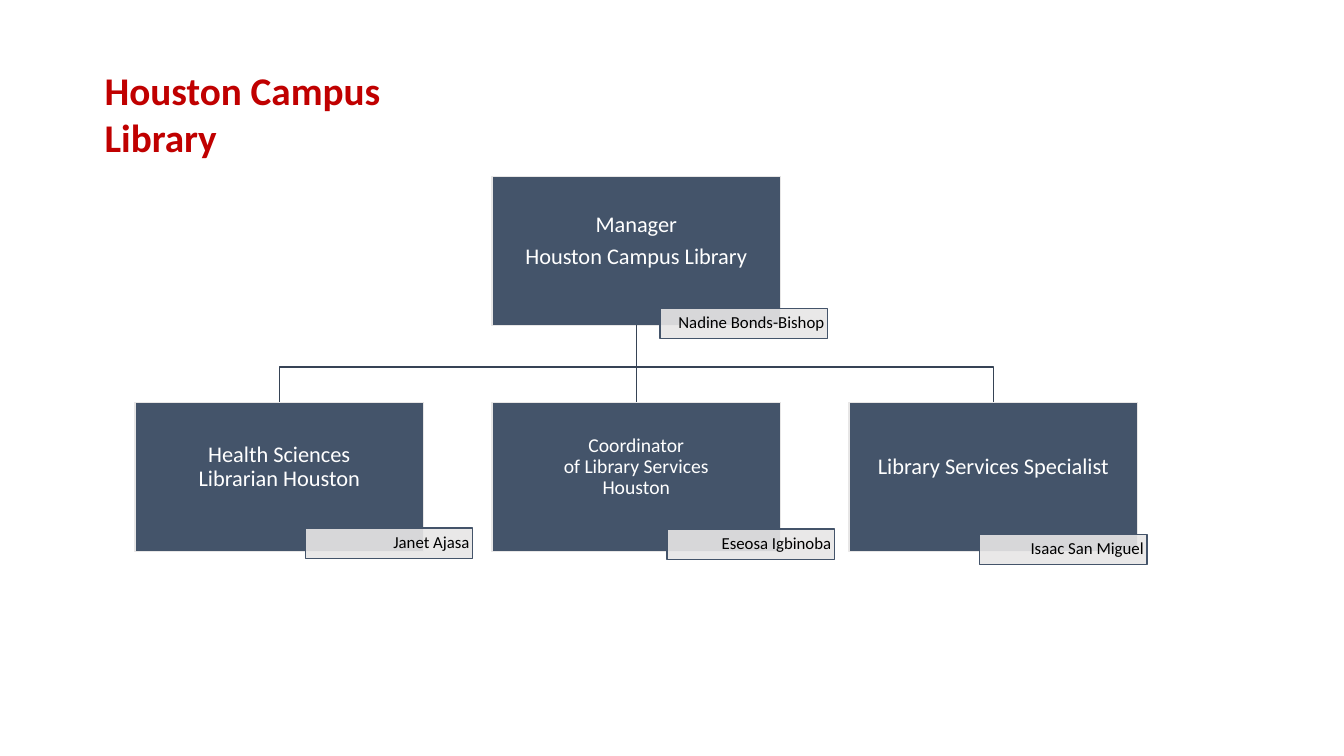
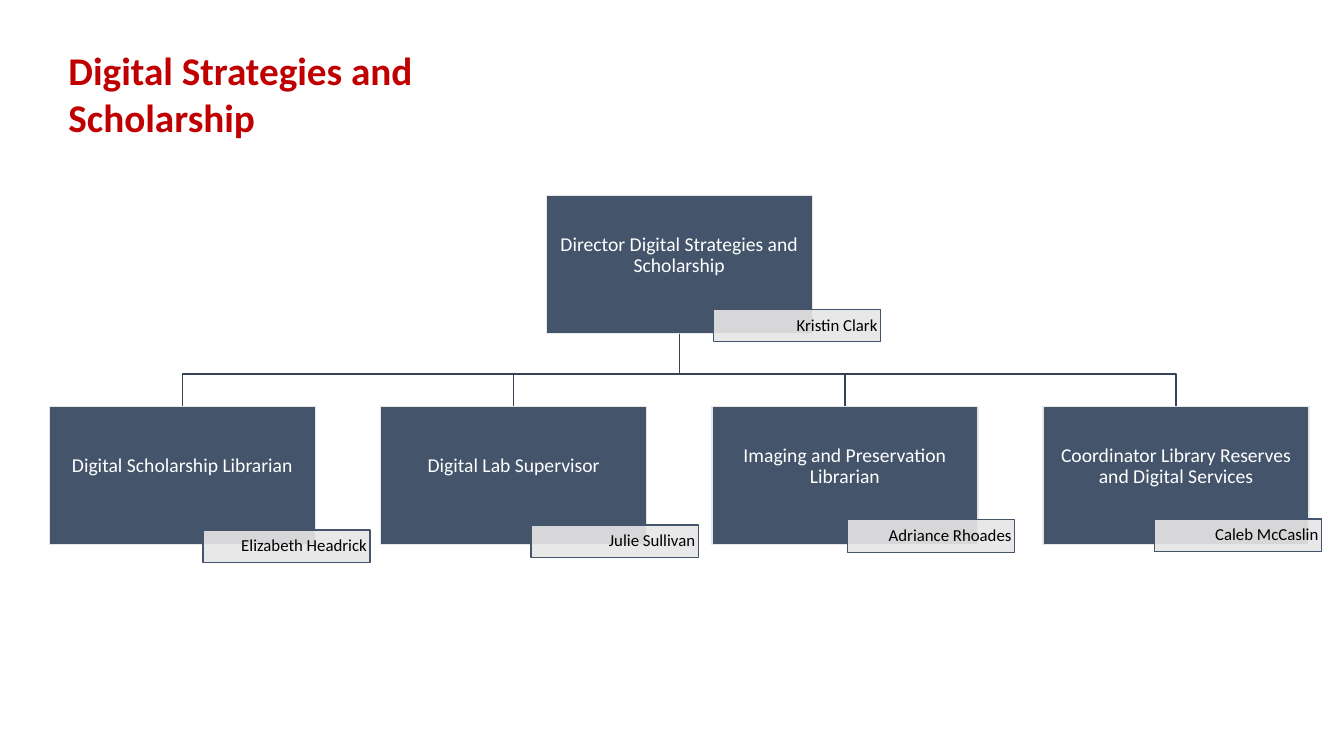
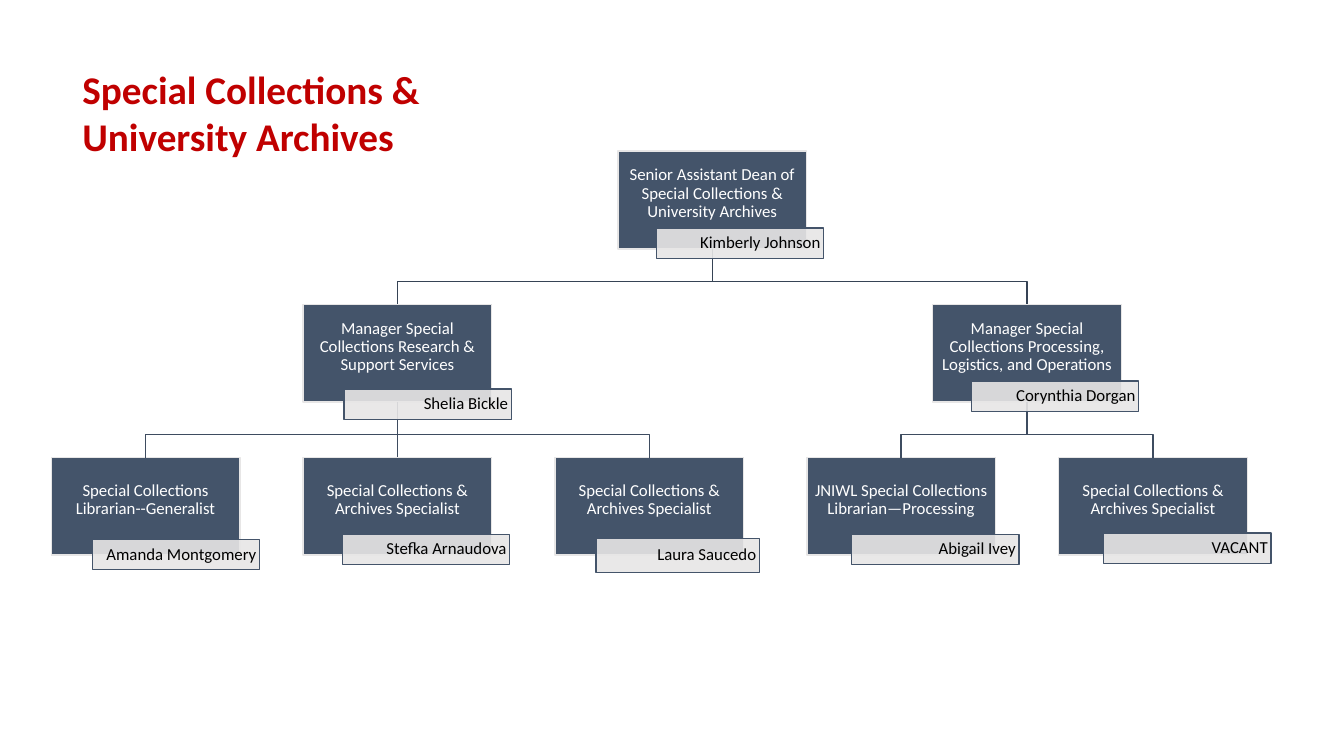
"""Build three library organisation charts, one to a slide."""
from dataclasses import dataclass
from typing import Optional

from lxml import etree
from pptx import Presentation
from pptx import util as u
from pptx.dml import color
from pptx.enum import shapes, text
from pptx.oxml import ns

FONT = "Calibri"
RED, SLATE, MIST = "C00000", "44546A", "E7E6E6"
WHITE, BLACK = "FFFFFF", "000000"
BRANCH_COLORS = ("364355", "3E4C60")
TAG_WIDTH = 119.5


@dataclass(frozen=True)
class Post:
    """A position, its holder's name tag and the posts below it."""
    role: str
    holder: str
    tag: tuple[float, float]
    reports: tuple["Post", ...] = ()
    size: Optional[float] = None
    tag_size: Optional[tuple[float, float]] = None


@dataclass(frozen=True)
class Chart:
    """A slide's title and the grid of its chart, in points."""
    title: str
    title_area: tuple[float, float, float, float]
    left: float
    top: float
    column_step: float
    row_step: float
    box_size: tuple[float, float]
    foot: float
    drop: float
    size: float
    tag_height: float
    head: Post


@dataclass(frozen=True)
class Placed:
    """A post whose box is drawn on the slide."""
    post: Post
    box: object
    level: int
    left: float
    reports: tuple["Placed", ...]


CHARTS = (
    Chart(
        "Houston Campus Library", (67.7, 43.2, 261.4, 74.9),
        left=96.5, top=126, column_step=255, row_step=161.3,
        box_size=(206, 106.5), foot=15, drop=25.2, size=16, tag_height=21.6,
        head=Post("Manager\nHouston Campus Library", "Nadine Bonds-Bishop", (471.6, 220.3), (
            Post("Health Sciences\vLibrarian Houston", "Janet Ajasa", (218.2, 377.3)),
            Post("Coordinator\vof Library Services\vHouston", "Eseosa Igbinoba",
                 (476.6, 378), size=14),
            Post("Library Services Specialist", "Isaac San Miguel", (699.8, 381.6)),
        )),
    ),
    Chart(
        "Digital Strategies and Scholarship", (41.8, 29.5, 382.3, 74.9),
        left=35.3, top=139.7, column_step=236.6, row_step=150.5,
        box_size=(190, 98.6), foot=13.7, drop=23, size=14, tag_height=23.2,
        head=Post("Director Digital Strategies and Scholarship", "Kristin Clark", (509.6, 221), (
            Post("Digital Scholarship Librarian", "Elizabeth Headrick", (144.9, 378.5)),
            Post("Digital Lab Supervisor", "Julie Sullivan", (379.4, 375.1)),
            Post("Imaging and Preservation Librarian", "Adriance Rhoades", (605.4, 371.3)),
            Post("Coordinator Library Reserves and Digital Services", "Caleb McCaslin",
                 (824.6, 370.8)),
        )),
    ),
    Chart(
        "Special Collections & University Archives", (51.8, 42.5, 332.6, 74.9),
        left=36.6, top=108, column_step=179.9, row_step=109.4,
        box_size=(134.8, 69.8), foot=10, drop=16.5, size=12, tag_height=21.6,
        head=Post("Senior Assistant Dean of Special Collections & University Archives",
                  "Kimberly Johnson", (468.9, 163), (
            Post("Manager Special Collections Research &\vSupport Services",
                 "Shelia Bickle", (245.7, 278), (
                Post("Special Collections\vLibrarian--Generalist", "Amanda Montgomery",
                     (66, 385.4)),
                Post("Special Collections & Archives Specialist", "Stefka Arnaudova",
                     (244.6, 381.7)),
                Post("Special Collections & Archives Specialist", "Laura Saucedo",
                     (425.7, 384.6), tag_size=(116.8, 24.3)),
            )),
            Post("Manager Special Collections Processing, Logistics, and Operations",
                 "Corynthia Dorgan", (693.9, 272.3), (
                Post("JNIWL Special Collections Librarian—Processing", "Abigail Ivey",
                     (608.3, 381.7)),
                Post("Special Collections & Archives Specialist", "VACANT",
                     (788.3, 380.8)),
            )),
        )),
    ),
)


def rgb(value: str) -> color.RGBColor:
    """Turn a hex string into a colour."""
    return color.RGBColor.from_string(value)


def write(shape, words: str, *, size: float, ink: str, bold: bool = False,
          align=text.PP_ALIGN.LEFT, anchor=text.MSO_ANCHOR.MIDDLE,
          insets: tuple[float, float, float, float] = (7.2, 3.6, 7.2, 3.6),
          spacing: float = 1.0, gap: float = 0) -> None:
    """Fill a shape with formatted text, one paragraph to a line."""
    frame = shape.text_frame
    frame.word_wrap = True
    frame.vertical_anchor = anchor
    (frame.margin_left, frame.margin_top,
     frame.margin_right, frame.margin_bottom) = map(u.Pt, insets)
    frame.text = words
    for index, para in enumerate(frame.paragraphs):
        para.alignment = align
        para.line_spacing = spacing
        if index:
            para.space_before = u.Pt(gap)
        for font in (para.font, *(span.font for span in para.runs)):
            font.name, font.size, font.bold = FONT, u.Pt(size), bold
            font.color.rgb = rgb(ink)


def set_line(shape, ink: str) -> None:
    """Give a shape or connector a one-point line."""
    shape.line.color.rgb = rgb(ink)
    shape.line.width = u.Pt(1)


def add_box(page, left: float, top: float, width: float, height: float,
            *, fill: str, line: str):
    """Draw a flat rectangle."""
    box = page.shapes.add_shape(shapes.MSO_SHAPE.RECTANGLE,
                                *map(u.Pt, (left, top, width, height)))
    box.shadow.inherit = False
    box.fill.solid()
    box.fill.fore_color.rgb = rgb(fill)
    set_line(box, line)
    return box


def add_title(page, chart: Chart) -> None:
    """Write the slide title."""
    box = page.shapes.add_textbox(*map(u.Pt, chart.title_area))
    write(box, chart.title, size=28, ink=RED, bold=True)


def place(page, chart: Chart, post: Post, level: int = 0, column: int = 0) -> Placed:
    """Draw a post's box centred over the boxes of its reports."""
    reports = []
    next_column = column
    for report in post.reports:
        reports.append(place(page, chart, report, level + 1, next_column))
        next_column += max(1, len(report.reports))
    if reports:
        left = (reports[0].left + reports[-1].left) / 2
    else:
        left = chart.left + column * chart.column_step
    box = add_box(page, left, chart.top + level * chart.row_step, *chart.box_size,
                  fill=SLATE, line=MIST)
    size = post.size or chart.size
    write(box, post.role, size=size, ink=WHITE, align=text.PP_ALIGN.CENTER,
          insets=(0.9, 0.9, 0.9, chart.foot), spacing=0.9, gap=0.35 * size)
    return Placed(post, box, level, left, tuple(reports))


def add_branches(page, chart: Chart, parent: Placed) -> None:
    """Join a box to each box below it."""
    width, height = chart.box_size
    start_x = parent.left + width / 2
    start_y = chart.top + parent.level * chart.row_step + height
    end_y = chart.top + (parent.level + 1) * chart.row_step
    for report in parent.reports:
        end_x = report.left + width / 2
        if abs(end_x - start_x) < 1:
            branch = page.shapes.add_connector(
                shapes.MSO_CONNECTOR.STRAIGHT,
                *map(u.Pt, (start_x, start_y, end_x, end_y)))
            branch.begin_connect(parent.box, 2)
            branch.end_connect(report.box, 0)
            set_line(branch, BRANCH_COLORS[parent.level])
            etree.SubElement(branch._element.spPr, ns.qn("a:effectLst"))
        else:
            bend_y = end_y - chart.drop
            outline = page.shapes.build_freeform(u.Pt(start_x), u.Pt(start_y))
            corners = ((start_x, bend_y), (end_x, bend_y), (end_x, end_y))
            outline.add_line_segments([(u.Pt(x), u.Pt(y)) for x, y in corners], close=False)
            branch = outline.convert_to_shape()
            branch.shadow.inherit = False
            branch.fill.background()
            set_line(branch, BRANCH_COLORS[parent.level])
        add_branches(page, chart, report)


def add_tags(page, chart: Chart, post: Post) -> None:
    """Draw the name tags of a post and of all posts below it."""
    width, height = post.tag_size or (TAG_WIDTH, chart.tag_height)
    tag = add_box(page, *post.tag, width, height, fill=MIST, line=SLATE)
    shade = tag._element.spPr.find(ns.qn("a:solidFill"))[0]
    etree.SubElement(shade, ns.qn("a:alpha"), val="90000")
    write(tag, post.holder, size=12, ink=BLACK, align=text.PP_ALIGN.RIGHT,
          insets=(2.2, 0.6, 2.2, 0.6), spacing=0.9)
    for report in post.reports:
        add_tags(page, chart, report)


def main() -> None:
    """Build the deck and save it."""
    deck = Presentation()
    deck.slide_width, deck.slide_height = u.Pt(960), u.Pt(540)
    for chart in CHARTS:
        page = deck.slides.add_slide(deck.slide_layouts[6])
        add_title(page, chart)
        add_branches(page, chart, place(page, chart, chart.head))
        add_tags(page, chart, chart.head)
    deck.save("out.pptx")


if __name__ == "__main__":
    main()
